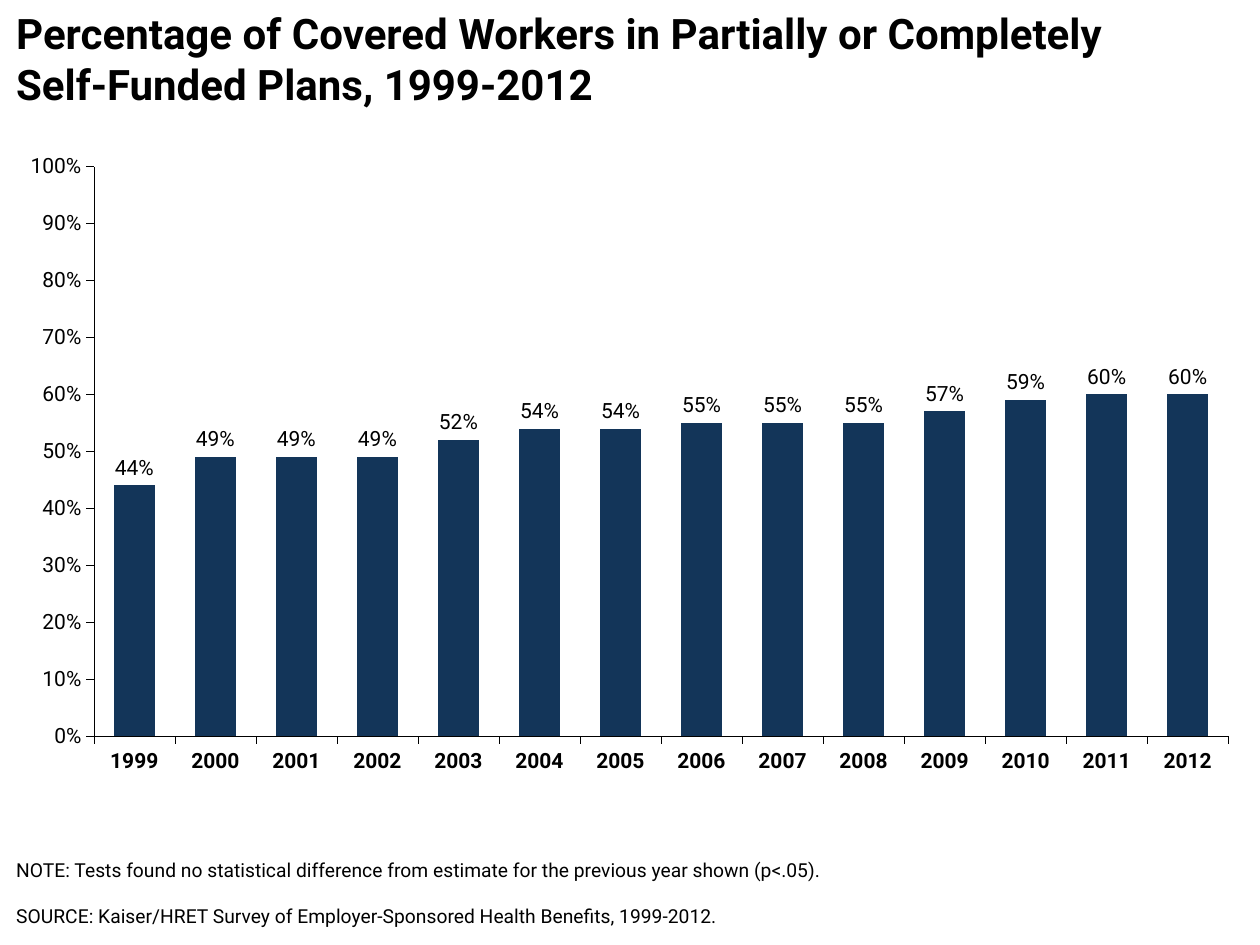
from dataclasses import dataclass

from lxml import etree
from pptx import Presentation
from pptx.chart.data import CategoryChartData
from pptx.dml.color import RGBColor
from pptx.enum.chart import XL_CHART_TYPE, XL_LABEL_POSITION, XL_TICK_MARK
from pptx.enum.text import MSO_ANCHOR
from pptx.oxml.ns import qn
from pptx.util import Inches, Pt

COLUMN = XL_CHART_TYPE.COLUMN_CLUSTERED
OUTSIDE_END = XL_LABEL_POSITION.OUTSIDE_END
TICK_OUT, TICK_NONE = XL_TICK_MARK.OUTSIDE, XL_TICK_MARK.NONE
MIDDLE, TOP = MSO_ANCHOR.MIDDLE, MSO_ANCHOR.TOP


@dataclass(frozen=True)
class Theme:
    """Colours, font and type sizes of the slide."""
    font: str = "Roboto"
    ink: RGBColor = RGBColor(0x00, 0x00, 0x00)
    bar: RGBColor = RGBColor(0x13, 0x35, 0x59)
    title: Pt = Pt(24)
    chart: Pt = Pt(12)
    note: Pt = Pt(11)
    hairline: Pt = Pt(0.25)


THEME = Theme()
TITLE = ("Percentage of Covered Workers in Partially or Completely "
         "Self-Funded Plans, 1999-2012")
NOTES = [
    "NOTE: Tests found no statistical difference from estimate for the previous year shown (p<.05).",
    "SOURCE: Kaiser/HRET Survey of Employer-Sponsored Health Benefits, 1999-2012.",
]
YEARS = [str(year) for year in range(1999, 2013)]
SHARES = [0.44, 0.49, 0.49, 0.49, 0.52, 0.54, 0.54,
          0.55, 0.55, 0.55, 0.57, 0.59, 0.6, 0.6]
PLOT = {"x": 0.06, "y": 0.03, "w": 0.94, "h": 0.89}


def style_font(font, size, bold=False):
    """Apply the theme font and ink at the given size."""
    font.name, font.size, font.bold = THEME.font, size, bold
    font.color.rgb = THEME.ink


def add_text(s, box, lines, size, bold=False, anchor=TOP, gap=Pt(0)):
    """Place paragraphs in a box, with a gap between them."""
    tf = s.shapes.add_textbox(*box).text_frame
    tf.word_wrap, tf.vertical_anchor = True, anchor
    for i, line in enumerate(lines):
        p = tf.add_paragraph() if i else tf.paragraphs[0]
        p.text = line
        p.space_before = gap if i else Pt(0)
        style_font(p.font, size, bold)


def set_plot_layout(chart):
    """Fix the inner plot area as fractions of the chart."""
    area = chart.plots[0]._element.getparent()
    for old in area.findall(qn("c:layout")):
        area.remove(old)
    layout = etree.Element(qn("c:layout"))
    manual = etree.SubElement(layout, qn("c:manualLayout"))
    settings = {"layoutTarget": "inner", "xMode": "edge", "yMode": "edge", **PLOT}
    for name, value in settings.items():
        etree.SubElement(manual, qn(f"c:{name}")).set("val", str(value))
    area.insert(0, layout)


def style_axis(axis, bold=False):
    """Give an axis its line, ticks and label font."""
    axis.has_major_gridlines = False
    axis.major_tick_mark, axis.minor_tick_mark = TICK_OUT, TICK_NONE
    axis.format.line.color.rgb = THEME.ink
    axis.format.line.width = THEME.hairline
    style_font(axis.tick_labels.font, THEME.chart, bold)


def add_share_chart(s, box):
    """Place the column chart of yearly shares in a box."""
    data = CategoryChartData(number_format="0%")
    data.categories = YEARS
    data.add_series("Series 1", SHARES)
    chart = s.shapes.add_chart(COLUMN, *box, data).chart
    chart.has_legend = chart.has_title = False
    style_font(chart.font, THEME.note)
    set_plot_layout(chart)

    style_axis(chart.category_axis, bold=True)
    axis = chart.value_axis
    style_axis(axis)
    axis.minimum_scale, axis.maximum_scale, axis.major_unit = 0, 1, 0.1
    axis.tick_labels.number_format = "0%"
    axis.tick_labels.number_format_is_linked = False

    plot = chart.plots[0]
    plot.gap_width, plot.vary_by_categories = 100, False
    fill = plot.series[0].format.fill
    fill.solid()
    fill.fore_color.rgb = THEME.bar
    plot.has_data_labels = True
    labels = plot.data_labels
    labels.show_value, labels.position = True, OUTSIDE_END
    labels.number_format, labels.number_format_is_linked = "0%", False
    style_font(labels.font, THEME.chart)


def main():
    """Build the slide and save it."""
    prs = Presentation()
    prs.slide_width, prs.slide_height = Inches(10), Inches(7.5)
    s = prs.slides.add_slide(prs.slide_layouts[6])
    add_text(s, (Inches(0.03), Inches(0), Inches(9.55), Inches(0.92)),
             [TITLE], THEME.title, bold=True, anchor=MIDDLE)
    add_share_chart(s, (Inches(0.17), Inches(1.17), Inches(9.58), Inches(5.08)))
    add_text(s, (Inches(0.03), Inches(6.76), Inches(7.39), Inches(0.66)),
             NOTES, THEME.note, gap=Pt(13))
    prs.save("out.pptx")


if __name__ == "__main__":
    main()
